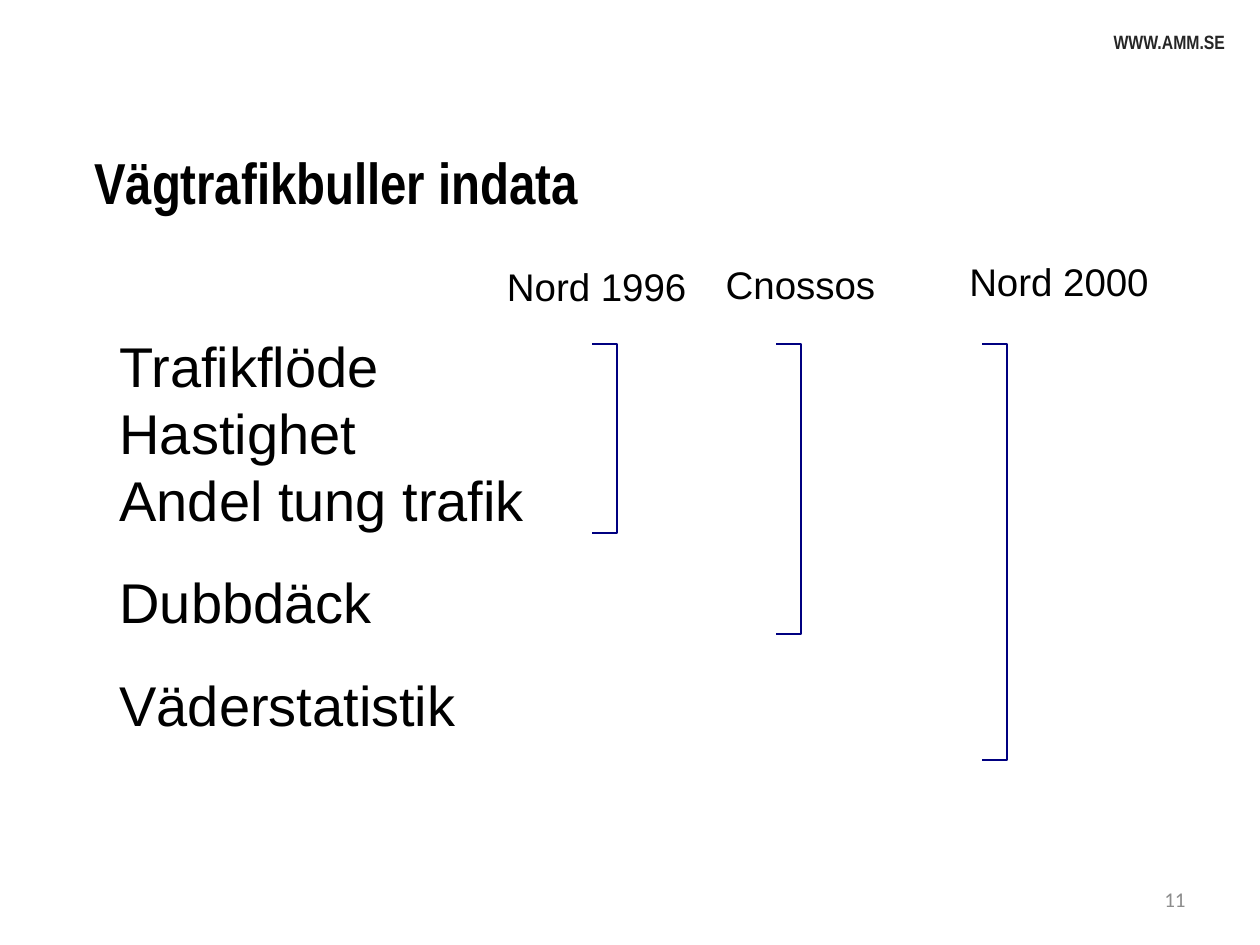
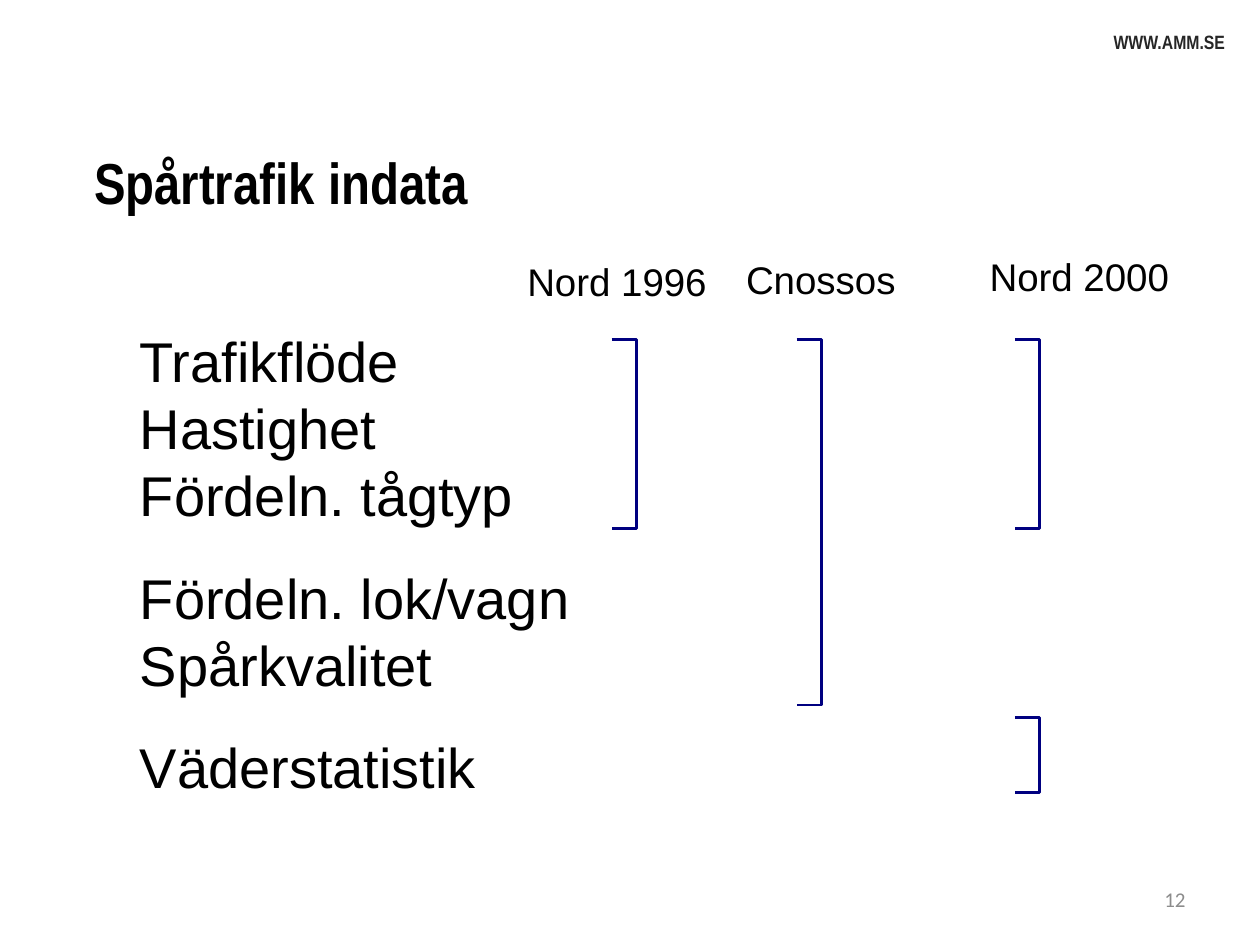
from dataclasses import dataclass

from pptx import Presentation
from pptx.dml.color import RGBColor as Rgb
from pptx.enum.text import MSO_ANCHOR as Anchor, PP_ALIGN as Align
from pptx.util import Cm, Pt


@dataclass(frozen=True)
class Style:
    font: str
    size: int
    color: str = "000000"
    bold: bool = False
    pitch: float = 1.0


class Theme:
    title = Style("Arial Narrow", 33, bold=True, pitch=0.9)
    site = Style("Arial Narrow", 11, "262626", True)
    number = Style("Calibri", 12, "8C8C8C")
    body = Style("Arial", 32)
    head = Style("Arial", 22)
    line = "000080"
    width = 1.45
    gap = 20


MODELS = [("Nord 1996", 7.81, -1.37), ("Cnossos", 12.22, -1.42), ("Nord 2000", 17.13, -1.47)]

TOPICS = [
    {
        "title": "Vägtrafikbuller indata",
        "box": (2.41, 6.68),
        "groups": ["Trafikflöde\nHastighet\nAndel tung trafik", "Dubbdäck", "Väderstatistik"],
        "spans": [(9.53, 0.26, 3.81), (13.24, 0.26, 5.84), (17.39, 0.26, 8.38)],
    },
    {
        "title": "Spårtrafik indata",
        "box": (2.82, 6.58),
        "groups": [
            "Trafikflöde\nHastighet\nFördeln. tågtyp",
            "Fördeln. lok/vagn\nSpårkvalitet",
            "Väderstatistik",
        ],
        "spans": [(9.51, 0.26, 3.81), (13.24, 0.26, 7.37), (17.64, 0.26, 3.81), (17.64, 7.88, 1.52)],
    },
]


def add_text(slide, box, lines, style, align=Align.LEFT, anchor=Anchor.TOP):
    frame = slide.shapes.add_textbox(*map(Cm, box)).text_frame
    frame.word_wrap = True
    frame.vertical_anchor = anchor
    frame.margin_left = frame.margin_right = 0
    frame.margin_top = frame.margin_bottom = 0
    for i, line in enumerate(lines):
        para = frame.add_paragraph() if i else frame.paragraphs[0]
        para.text = line
        para.alignment = align
        para.line_spacing = style.pitch
        if i:
            para.space_before = Pt(Theme.gap)
        font = para.font
        font.name, font.size, font.bold = style.font, Pt(style.size), style.bold
        font.color.rgb = Rgb.from_string(style.color)


def add_span(slide, left, top, height, depth=0.5):
    right, base = left + depth, top + height
    path = slide.shapes.build_freeform(Cm(left), Cm(top))
    points = [(right, top), (right, base), (left, base)]
    path.add_line_segments([(Cm(x), Cm(y)) for x, y in points], close=False)
    shape = path.convert_to_shape()
    shape.shadow.inherit = False
    shape.fill.background()
    shape.line.color.rgb = Rgb.from_string(Theme.line)
    shape.line.width = Pt(Theme.width)


def add_frame(slide, title, number):
    add_text(slide, (1.9, 3.12, 22, 2.2), [title], Theme.title)
    add_text(slide, (22.3, 17.8, 1.6, 0.67), [str(number)], Theme.number, Align.RIGHT, Anchor.MIDDLE)
    add_text(slide, (17.7, 0.62, 7, 1.28), ["WWW.AMM.SE"], Theme.site, Align.RIGHT)


def add_chart(slide, box, groups, spans):
    left, top = box
    add_text(slide, (left, top, 17.98, 11.05), groups, Theme.body)
    for x, y, height in spans:
        add_span(slide, left + x, top + y, height)
    for name, x, y in MODELS:
        add_text(slide, (left + x, top + y, 4.75, 1.37), [name], Theme.head)


def main():
    deck = Presentation()
    deck.slide_width, deck.slide_height = Cm(25.4), Cm(19.05)
    for number, topic in enumerate(TOPICS, 11):
        slide = deck.slides.add_slide(deck.slide_layouts[6])
        add_frame(slide, topic["title"], number)
        add_chart(slide, topic["box"], topic["groups"], topic["spans"])
    deck.save("out.pptx")


if __name__ == "__main__":
    main()
